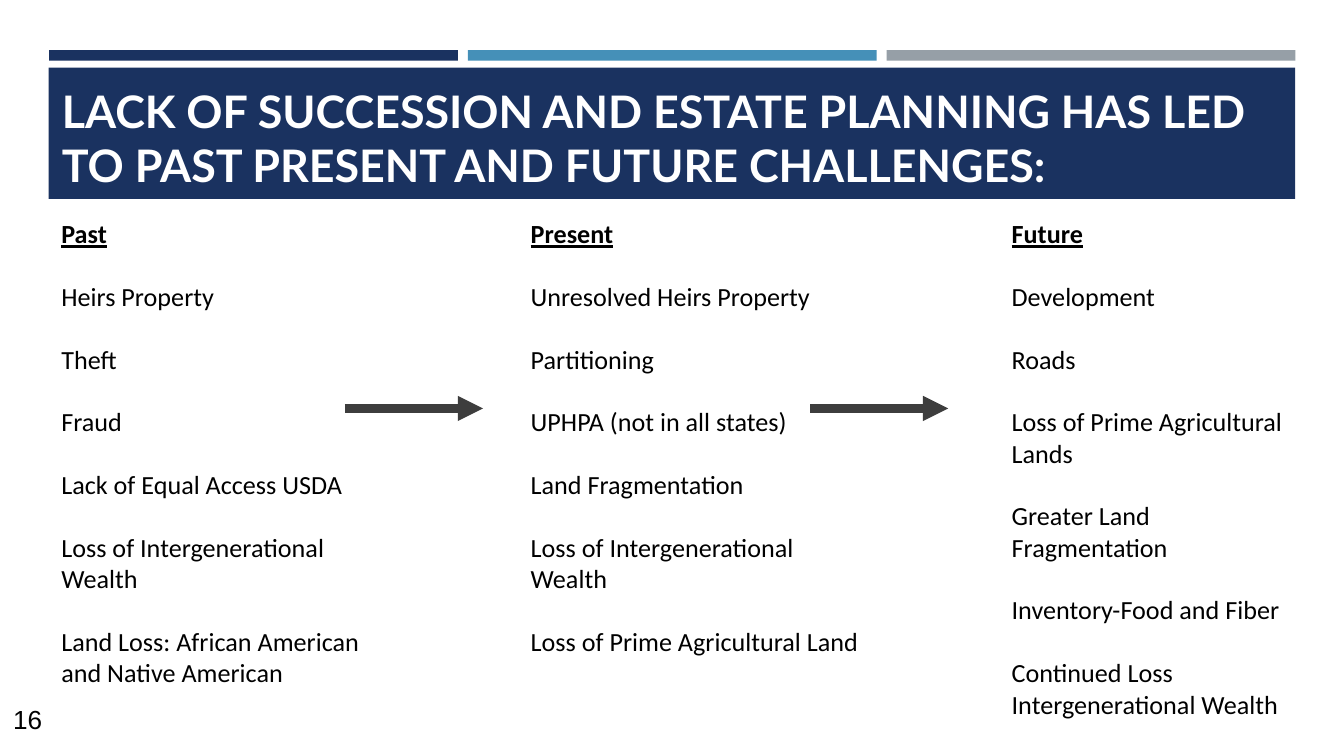
import pptx
import pptx.dml.color
import pptx.enum.shapes
import pptx.enum.text
import pptx.oxml
import pptx.oxml.ns
import pptx.util
from pptx.util import Cm

NAVY, BLUE, GREY = "1A3260", "4590B8", "969FA7"
BLACK, WHITE, CHARCOAL = "000000", "FFFFFF", "3D3D3D"
TITLE_ONLY = 5

COLUMNS = [
    ((0.91, 3.86, 6.98, 10.01), "Past",
     ["Heirs Property", "Theft", "Fraud", "Lack of Equal Access USDA",
      "Loss of Intergenerational Wealth",
      "Land Loss: African American and Native American"]),
    ((9.78, 3.86, 6.98, 8.89), "Present",
     ["Unresolved Heirs Property", "Partitioning", "UPHPA (not in all states)",
      "Land Fragmentation", "Loss of Intergenerational Wealth",
      "Loss of Prime Agricultural Land"]),
    ((18.87, 3.86, 5.92, 10.08), "Future",
     ["Development", "Roads", "Loss of Prime Agricultural Lands",
      "Greater Land Fragmentation", "Inventory-Food and Fiber",
      "Continued Loss Intergenerational Wealth"]),
]


def rgb(hex_string):
    return pptx.dml.color.RGBColor.from_string(hex_string)


def apply(target, values):
    for name, value in values.items():
        setattr(target, name, value)


def place(shape, box):
    apply(shape, dict(zip(("left", "top", "width", "height"), map(Cm, box))))


def format_frame(frame, inset_x, inset_y):
    apply(frame, {
        "word_wrap": True,
        "auto_size": pptx.enum.text.MSO_AUTO_SIZE.NONE,
        "vertical_anchor": pptx.enum.text.MSO_ANCHOR.TOP,
        "margin_left": Cm(inset_x), "margin_right": Cm(inset_x),
        "margin_top": Cm(inset_y), "margin_bottom": Cm(inset_y),
    })


def write(paragraph, text, font, size, color, **style):
    run = paragraph.add_run()
    run.text = text
    apply(run.font, {"name": font, "size": pptx.util.Pt(size), **style})
    run.font.color.rgb = rgb(color)
    paragraph.alignment = pptx.enum.text.PP_ALIGN.LEFT


def add_bar(slide, box, color):
    bar = slide.shapes.add_shape(
        pptx.enum.shapes.MSO_SHAPE.RECTANGLE, *map(Cm, box))
    bar.shadow.inherit = False
    bar.fill.solid()
    bar.fill.fore_color.rgb = rgb(color)
    bar.line.fill.background()


def add_accent_bars(slide, box):
    """Split the box into three equal bars with a fixed gap."""
    left, top, width, height = box
    gap = 0.19
    bar_width = (width - 2 * gap) / 3
    for i, color in enumerate((NAVY, BLUE, GREY)):
        add_bar(slide, (left + i * (bar_width + gap), top, bar_width, height), color)


def add_title_band(slide, box, text):
    left, top, width, height = box
    add_bar(slide, box, NAVY)
    title = slide.shapes.title
    slide.shapes._spTree.append(title._element)  # bring in front of the band
    place(title, (left, top + 0.05, width - 0.58, height - 0.38))
    format_frame(title.text_frame, 0.25, 0.25)
    write(title.text_frame.paragraphs[0], text, "Lato", 24, WHITE, bold=True)


def add_column(slide, box, heading, challenges):
    frame = slide.shapes.add_textbox(*map(Cm, box)).text_frame
    format_frame(frame, 0.25, 0.25)
    for i, text in enumerate([heading] + challenges):
        paragraph = frame.add_paragraph() if i else frame.paragraphs[0]
        paragraph.space_after = pptx.util.Pt(16.8)
        write(paragraph, text, "Calibri", 14, BLACK, bold=i == 0, underline=i == 0)


def add_arrow(slide, left, y, length):
    arrow = slide.shapes.add_connector(
        pptx.enum.shapes.MSO_CONNECTOR.STRAIGHT,
        Cm(left), Cm(y), Cm(left + length), Cm(y))
    arrow.line.width = pptx.util.Pt(4.5)
    arrow.line.color.rgb = rgb(CHARCOAL)
    head = pptx.oxml.parse_xml(
        f'<a:tailEnd {pptx.oxml.ns.nsdecls("a")} type="triangle"/>')
    arrow.line._get_or_add_ln().append(head)
    arrow._element.spPr.append(
        pptx.oxml.parse_xml(f'<a:effectLst {pptx.oxml.ns.nsdecls("a")}/>'))


def add_page_number(slide, box, number):
    frame = slide.shapes.add_textbox(*map(Cm, box)).text_frame
    format_frame(frame, 0.25, 0.13)
    write(frame.paragraphs[0], number, "Arial", 14, BLACK)


def main():
    deck = pptx.Presentation()
    apply(deck, {"slide_width": Cm(25.4), "slide_height": Cm(14.29)})
    slide = deck.slides.add_slide(deck.slide_layouts[TITLE_ONLY])

    add_accent_bars(slide, (0.93, 0.95, 23.55, 0.2))
    add_page_number(slide, (0, 13.16, 1.19, 1.14), "16")
    add_title_band(
        slide, (0.92, 1.28, 23.56, 2.48),
        "LACK OF SUCCESSION AND ESTATE PLANNING HAS LED "
        "TO PAST PRESENT AND FUTURE CHALLENGES:")
    for box, heading, challenges in COLUMNS:
        add_column(slide, box, heading, challenges)
    for left in (6.52, 15.31):
        add_arrow(slide, left, 7.72, 2.61)

    deck.save("out.pptx")


if __name__ == "__main__":
    main()
